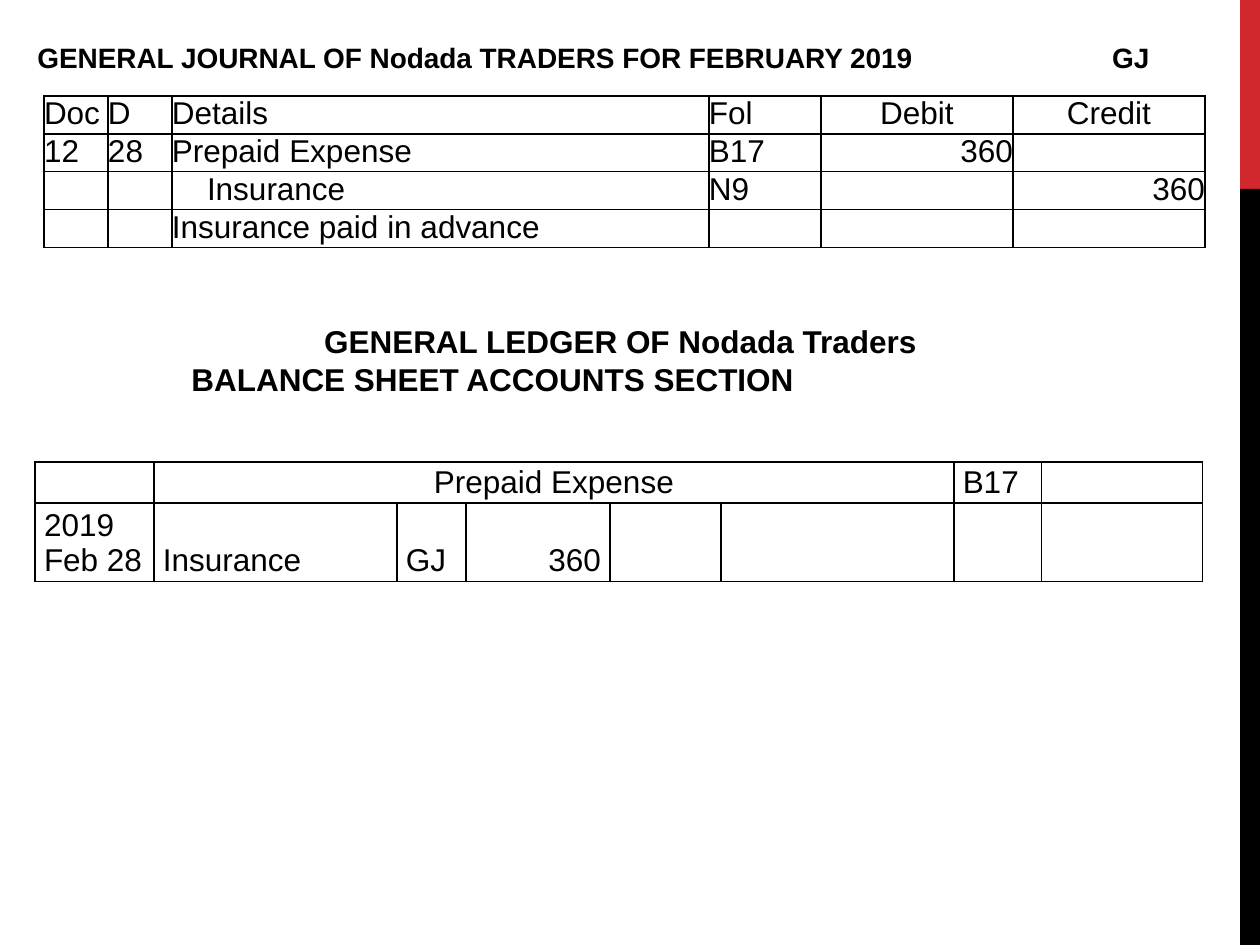
from lxml import etree
from pptx import Presentation, util as u
from pptx.dml.color import RGBColor
from pptx.enum import shapes, text
from pptx.oxml.ns import qn

SCALE = 914400 / 126
RED = RGBColor(0xD1, 0x28, 0x2E)
BLACK = RGBColor(0, 0, 0)
LEFT, MID, RIGHT = text.PP_ALIGN.LEFT, text.PP_ALIGN.CENTER, text.PP_ALIGN.RIGHT


def px(n):
    return u.Emu(round(n * SCALE))


def apply(item, vals):
    for key, val in vals.items():
        setattr(item, key, val)


def write(par, words, size, align=LEFT, bold=False, indent=0):
    par.alignment = align
    if indent:
        par._p.get_or_add_pPr().set("marL", str(px(indent)))
    run = par.add_run()
    run.text = words
    apply(run.font, {"name": "Arial", "size": u.Pt(size), "bold": bold})
    run.font.color.rgb = BLACK


def add_bar(slide, box, color):
    bar = slide.shapes.add_shape(shapes.MSO_SHAPE.RECTANGLE, *map(px, box))
    bar.shadow.inherit = False
    bar.fill.solid()
    bar.fill.fore_color.rgb = color
    bar.line.fill.background()


def add_side(slide, box):
    """Red over black strip; the red part takes one fifth of the height."""
    x, y, w, h = box
    top = h // 5
    add_bar(slide, (x, y, w, top), RED)
    add_bar(slide, (x, y + top, w, h - top), BLACK)


def add_head(slide, box, lines, size, tab=None):
    """Bold heading; each line is (words, align, indent)."""
    frame = slide.shapes.add_textbox(*map(px, box)).text_frame
    apply(frame, {"word_wrap": True, "vertical_anchor": text.MSO_ANCHOR.MIDDLE})
    for i, (words, align, indent) in enumerate(lines):
        par = frame.add_paragraph() if i else frame.paragraphs[0]
        write(par, words, size, align, True, indent)
        if tab:
            tabs = etree.SubElement(par._p.get_or_add_pPr(), qn("a:tabLst"))
            etree.SubElement(tabs, qn("a:tab"), pos=str(px(tab)), algn="r")


def add_edges(cell):
    props = cell._tc.get_or_add_tcPr()
    for side in ("lnL", "lnR", "lnT", "lnB"):
        line = etree.SubElement(props, qn("a:" + side), w=str(u.Pt(1)))
        fill = etree.SubElement(line, qn("a:solidFill"))
        etree.SubElement(fill, qn("a:srgbClr"), val=str(BLACK))


def add_grid(slide, spot, cols, rows, data, style, merge=None):
    """Ruled table; data maps (row, column) to (words, align, indent)."""
    box = (*spot, sum(cols), sum(rows))
    table = slide.shapes.add_table(len(rows), len(cols), *map(px, box)).table
    apply(table, {"first_row": False, "horz_banding": False})
    for col, w in zip(table.columns, cols):
        col.width = px(w)
    for row, h in zip(table.rows, rows):
        row.height = px(h)
    for cell in table.iter_cells():
        apply(cell, style)
        add_edges(cell)
        cell.fill.background()
    if merge:
        first, last = merge
        table.cell(*first).merge(table.cell(*last))
    for place, (words, align, indent) in data.items():
        frame = table.cell(*place).text_frame
        for i, line in enumerate(words.split("\n")):
            par = frame.add_paragraph() if i else frame.paragraphs[0]
            write(par, line, 18, align, indent=indent)


def add_journal(slide, box):
    x, y, w, h = box
    add_head(slide, (x, y, w, 47), [
        ("GENERAL JOURNAL OF Nodada TRADERS FOR FEBRUARY 2019\tGJ", LEFT, 0),
    ], 16, tab=1112)
    heads = ("Doc", "D", "Details", "Fol", "Debit", "Credit")
    data = {(0, c): (word, MID if c > 3 else LEFT, 0)
            for c, word in enumerate(heads)}
    data |= {
        (1, 0): ("12", LEFT, 0),
        (1, 1): ("28", LEFT, 0),
        (1, 2): ("Prepaid Expense", LEFT, 0),
        (1, 3): ("B17", LEFT, 0),
        (1, 4): ("360", RIGHT, 0),
        (2, 2): ("Insurance", LEFT, 35),
        (2, 3): ("N9", LEFT, 0),
        (2, 5): ("360", RIGHT, 0),
        (3, 2): ("Insurance paid in advance", LEFT, 0),
    }
    style = dict.fromkeys(
        ("margin_left", "margin_right", "margin_top", "margin_bottom"), 0)
    add_grid(slide, (x + 19, y + 62), (64, 64, 537, 112, 192, 192),
             [(h - 62) // 4] * 4, data, style)


def add_ledger(slide, box):
    x, y, w, h = box
    add_head(slide, (x, y, w, 90), [
        ("GENERAL LEDGER OF Nodada Traders", MID, 0),
        ("BALANCE SHEET ACCOUNTS SECTION", LEFT, 144),
    ], 18)
    data = {
        (0, 1): ("Prepaid Expense", MID, 0),
        (0, 6): ("B17", LEFT, 0),
        (1, 0): ("2019\nFeb 28", LEFT, 0),
        (1, 1): ("Insurance", LEFT, 0),
        (1, 2): ("GJ", LEFT, 0),
        (1, 3): ("360", RIGHT, 0),
    }
    style = {"margin_left": px(9), "margin_right": px(9), "margin_top": 0,
             "margin_bottom": px(3), "vertical_anchor": text.MSO_ANCHOR.BOTTOM}
    add_grid(slide, (x, y + 147), (119, 243, 69, 144, 111, 233, 88, 161),
             (38, h - 185), data, style, merge=((0, 1), (0, 5)))


def main():
    deck = Presentation()
    apply(deck, {"slide_width": px(1260), "slide_height": px(945)})
    slide = deck.slides.add_slide(deck.slide_layouts[6])
    add_side(slide, (1240, 0, 20, 945))
    add_journal(slide, (25, 34, 1181, 202))
    add_ledger(slide, (35, 315, 1171, 260))
    deck.save("out.pptx")


if __name__ == "__main__":
    main()
